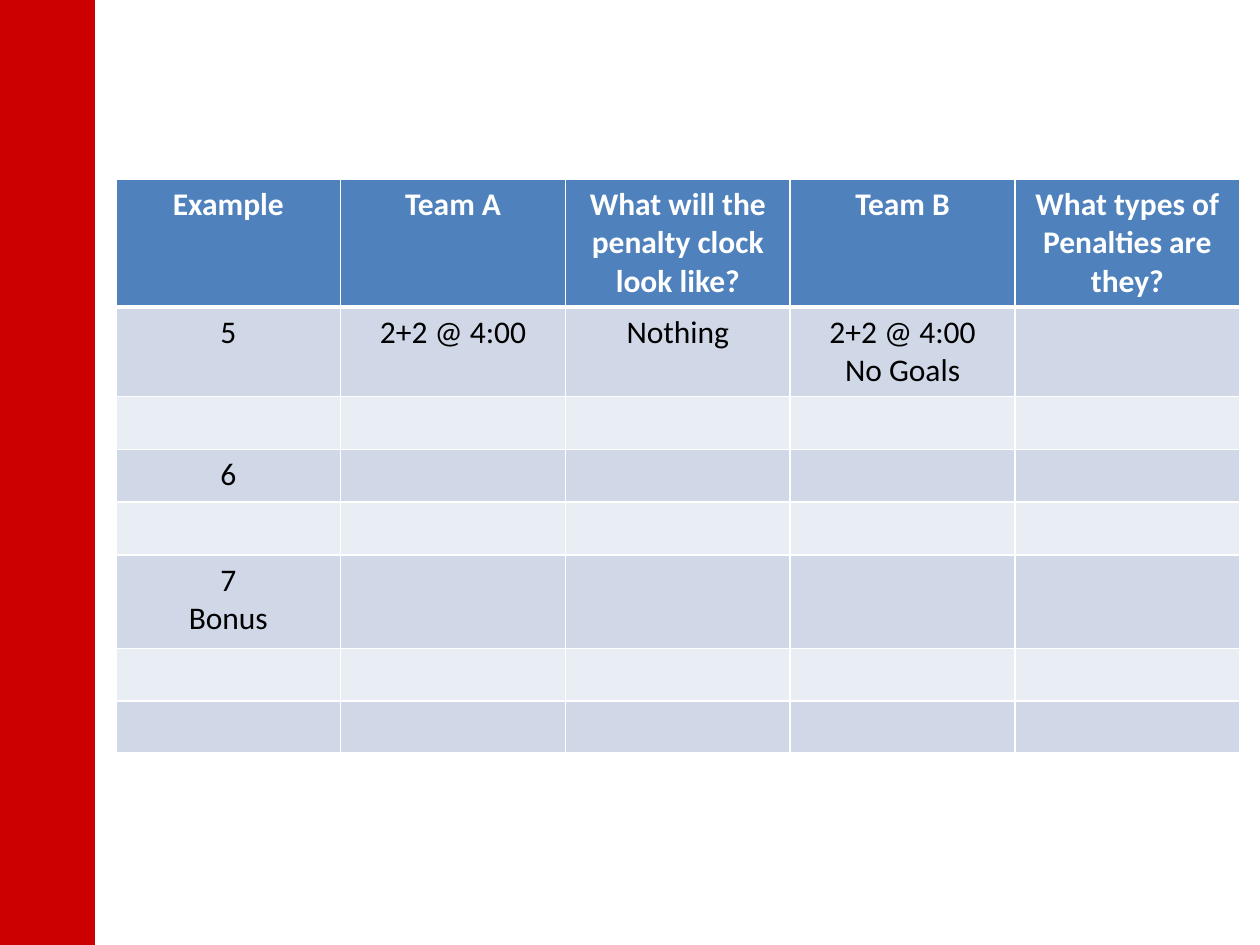
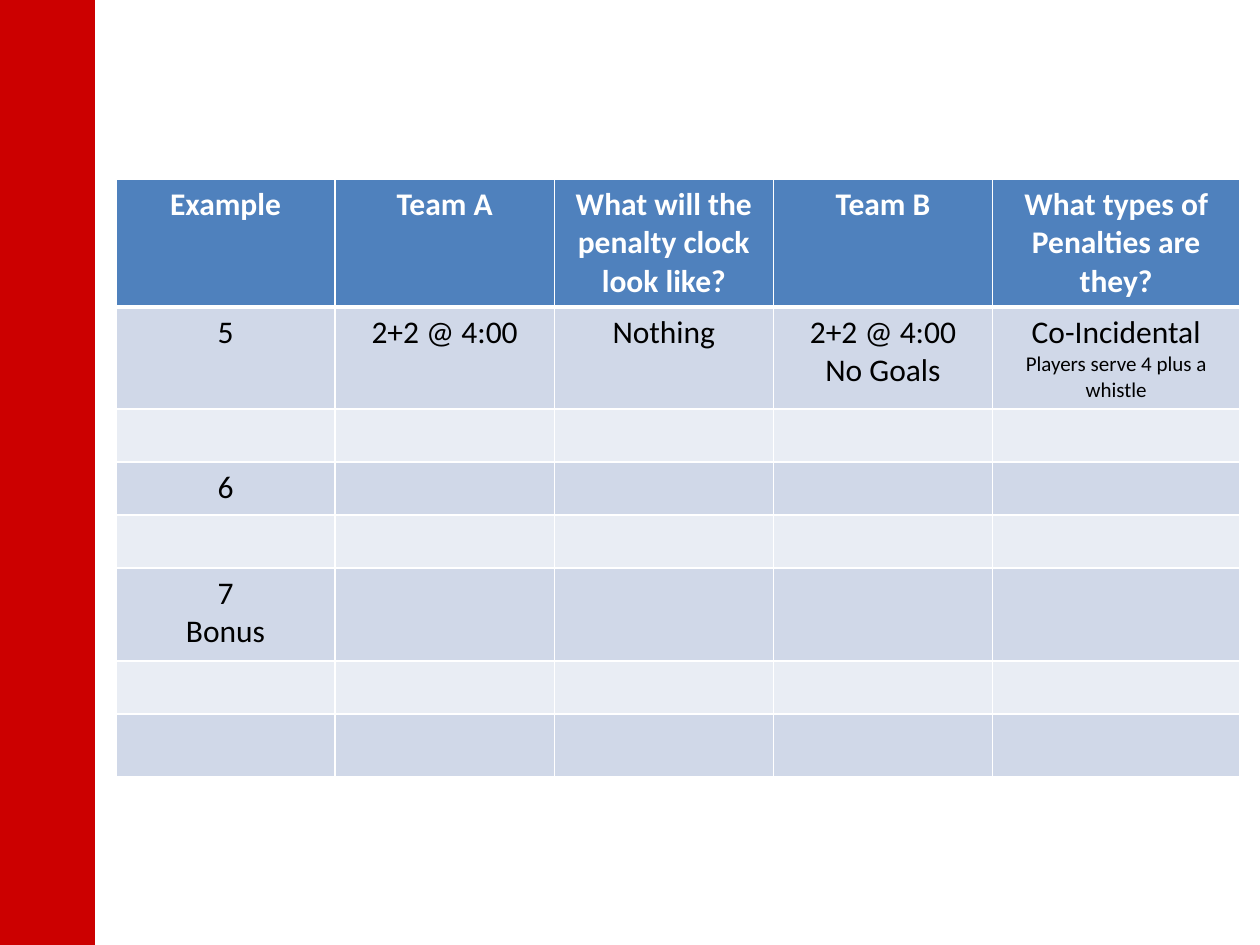
from dataclasses import dataclass

import lxml.etree
import pptx
import pptx.dml.color
import pptx.enum.shapes
import pptx.enum.text
import pptx.oxml.ns
import pptx.util


@dataclass(frozen=True)
class Theme:
    font: str = "Calibri"
    size: int = 18
    small: int = 12
    red: str = "CC0000"
    blue: str = "4F81BD"
    dark: str = "D0D8E8"
    light: str = "E9EDF4"
    white: str = "FFFFFF"
    black: str = "000000"
    thin: float = 1
    thick: float = 3
    edge: float = 0.75


@dataclass(frozen=True)
class Entry:
    text: str = ""
    note: str = ""


@dataclass(frozen=True)
class Sheet:
    answer: Entry
    last_col: float
    last_row: float
    height: float


THEME = Theme()
WIDE, HIGH = pptx.util.Inches(10), pptx.util.Inches(7.5)
BAND = 7.5
LEFT, TOP, SPAN = 9.2, 18.93, 89.2
ROWS = (12.93, 5.6, 5.6, 5.6, 5.6, 9.87, 5.6)
HEADS = (
    "Example",
    "Team A",
    "What will the penalty clock look like?",
    "Team B",
    "What types of Penalties are they?",
)
CASE = ("5", "2+2 @ 4:00", "Nothing", "2+2 @ 4:00\nNo Goals")
LABELS = {3: "6", 5: "7\nBonus"}
SHEETS = (
    Sheet(Entry(), 0.2, 5.33, 60.4),
    Sheet(Entry("Co-Incidental", "Players serve 4 plus a whistle"), 0.22, 6.67, 63.07),
)


def across(share: float) -> int:
    return round(WIDE * share / 100)


def down(share: float) -> int:
    return round(HIGH * share / 100)


def tint(code: str) -> pptx.dml.color.RGBColor:
    return pptx.dml.color.RGBColor.from_string(code)


def draw_band(slide) -> None:
    band = slide.shapes.add_shape(
        pptx.enum.shapes.MSO_SHAPE.RECTANGLE, 0, 0, across(BAND), HIGH
    )
    band.shadow.inherit = False
    band.fill.solid()
    band.fill.fore_color.rgb = tint(THEME.red)
    band.line.color.rgb = tint(THEME.red)
    band.line.width = pptx.util.Pt(THEME.edge)


def rule_cell(cell, row: int) -> None:
    name = pptx.oxml.ns.qn
    props = cell._tc.get_or_add_tcPr()
    thick = {"T": row == 1, "B": row == 0}
    for side in "LRTB":
        width = THEME.thick if thick.get(side) else THEME.thin
        line = lxml.etree.SubElement(
            props, name(f"a:ln{side}"), w=str(pptx.util.Pt(width))
        )
        fill = lxml.etree.SubElement(line, name("a:solidFill"))
        lxml.etree.SubElement(fill, name("a:srgbClr"), val=THEME.white)


def fill_cell(cell, entry: Entry, row: int) -> None:
    rule_cell(cell, row)
    cell.fill.solid()
    shade = THEME.dark if row % 2 else THEME.light
    cell.fill.fore_color.rgb = tint(shade if row else THEME.blue)
    cell.text_frame.text = "\n".join(filter(None, (entry.text, entry.note)))
    for para in cell.text_frame.paragraphs:
        para.alignment = pptx.enum.text.PP_ALIGN.CENTER
        for run in para.runs:
            small = run.text == entry.note
            run.font.name = THEME.font
            run.font.size = pptx.util.Pt(THEME.small if small else THEME.size)
            run.font.bold = row == 0
            run.font.color.rgb = tint(THEME.black if row else THEME.white)


def find_entry(sheet: Sheet, row: int, col: int) -> Entry:
    if row == 0:
        return Entry(HEADS[col])
    if row == 1:
        return Entry(CASE[col]) if col < len(CASE) else sheet.answer
    return Entry(LABELS.get(row, "") if col == 0 else "")


def draw_table(slide, sheet: Sheet) -> None:
    rows = (*ROWS, sheet.last_row)
    count = len(HEADS)
    frame = slide.shapes.add_table(
        len(rows), count, across(LEFT), down(TOP), across(SPAN), down(sheet.height)
    )
    table = frame.table
    even = (1 - sheet.last_col) / (count - 1)
    for col, column in enumerate(table.columns):
        share = even if col < count - 1 else sheet.last_col
        column.width = across(SPAN * share)
    for row, share in enumerate(rows):
        table.rows[row].height = down(share)
        for col in range(count):
            fill_cell(table.cell(row, col), find_entry(sheet, row, col), row)
    frame.height = down(sheet.height)


def main() -> None:
    deck = pptx.Presentation()
    deck.slide_width, deck.slide_height = WIDE, HIGH
    for sheet in SHEETS:
        slide = deck.slides.add_slide(deck.slide_layouts[6])
        draw_band(slide)
        draw_table(slide, sheet)
    deck.save("out.pptx")


if __name__ == "__main__":
    main()
